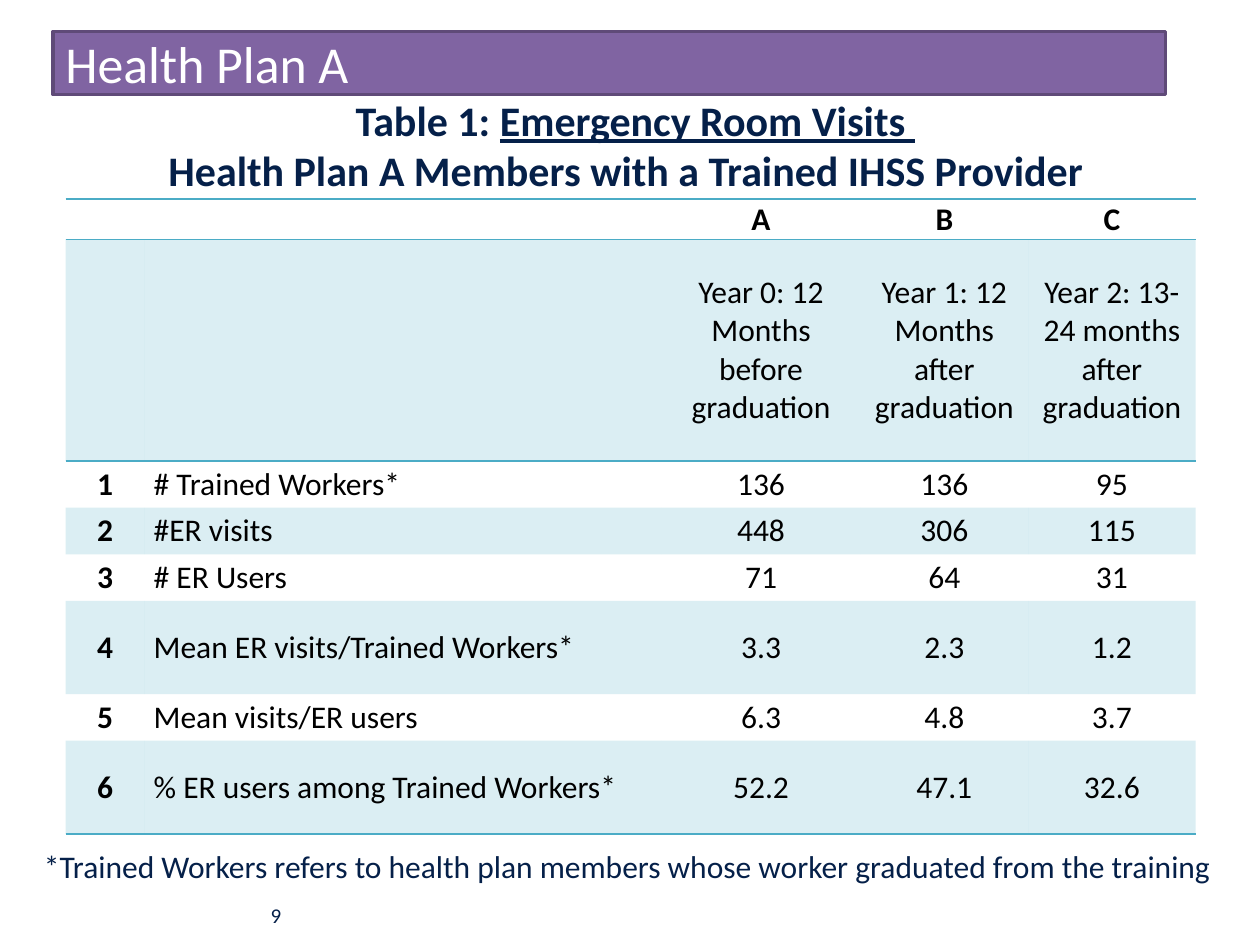
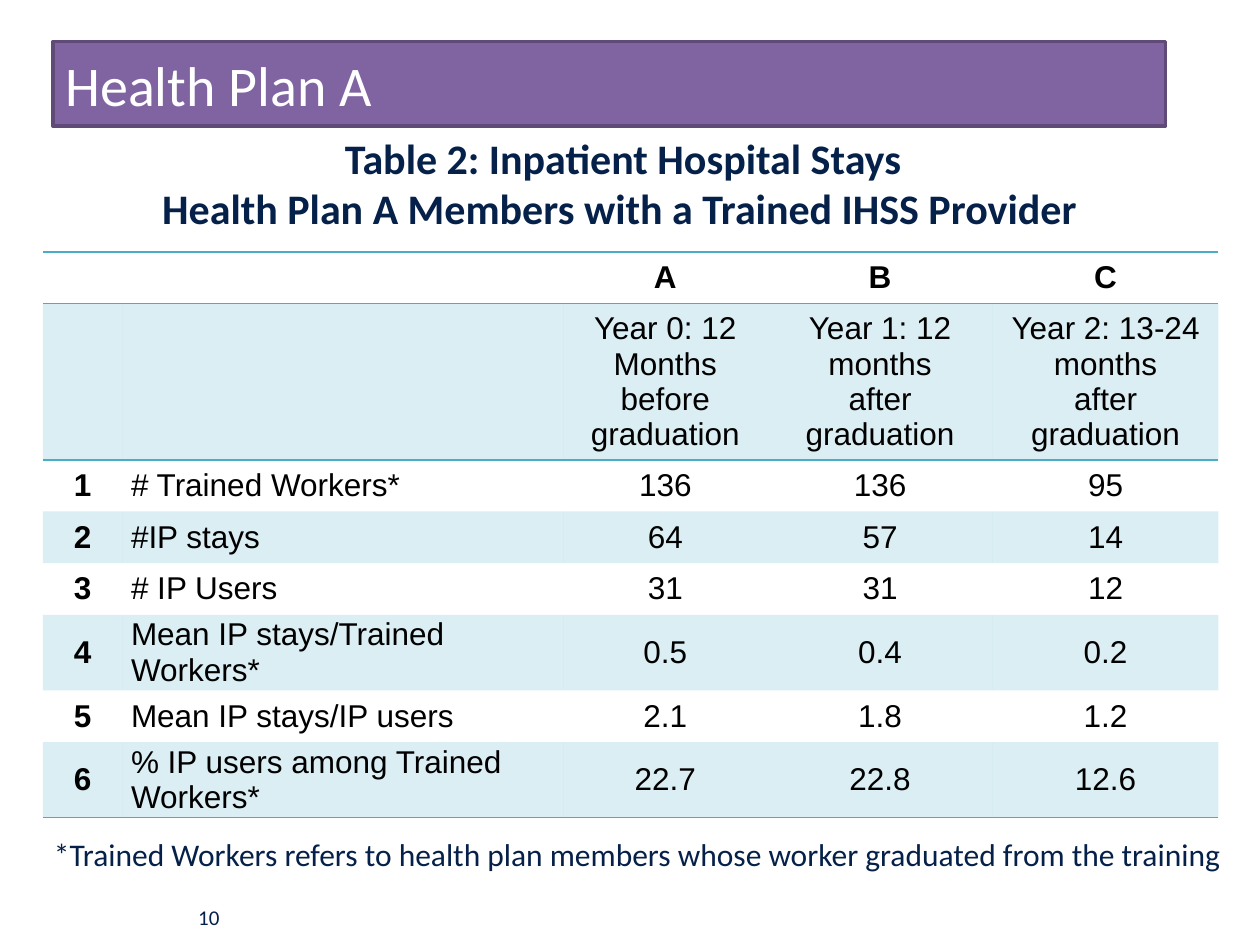
"""Build two health plan slides, each with a table of outcomes by year."""
from dataclasses import dataclass
from typing import NamedTuple

from lxml.etree import SubElement
from pptx import Presentation
from pptx.dml.color import RGBColor
from pptx.enum.shapes import MSO_SHAPE as Kind
from pptx.enum.text import MSO_ANCHOR as Anchor, PP_ALIGN as Align
from pptx.oxml.ns import qn
from pptx.util import Emu, Pt

SCALE = 9144
NAVY = RGBColor(0x05, 0x20, 0x49)
PURPLE = RGBColor(0x80, 0x64, 0xA2)
PLUM = RGBColor(0x5F, 0x4A, 0x78)
TEAL = RGBColor(0x4B, 0xAC, 0xC6)
WHITE = RGBColor(0xFF, 0xFF, 0xFF)
BLACK = RGBColor(0, 0, 0)
BODY = "Calibri"
NO_STYLE = "{2D5ABB26-0587-4C30-8999-92F81FD0307C}"
HEADING = "Health Plan A"
GROUP = "Health Plan A Members with a Trained IHSS Provider "
NOTE = ("*Trained Workers refers to health plan members "
        "whose worker graduated from the training")


class Box(NamedTuple):
    left: int
    top: int
    width: int
    height: int


class Run(NamedTuple):
    text: str
    bold: bool = False
    under: bool = False
    size: float | None = None


@dataclass
class Grid:
    box: Box
    cols: list[int]
    rows: list[int]
    font: str
    years: list[str]
    data: list[tuple[str, str, str, str]]


@dataclass
class Page:
    number: str
    num_box: Box
    band: Box
    band_size: float
    title: list[Run]
    title_box: Box
    note_box: Box
    grid: Grid


PAGES = [
    Page("9", Box(0, 706, 233, 40), Box(42, 25, 883, 50), 29.6,
         [Run(" "), Run("Table 1: ", True),
          Run("Emergency Room Visits ", True, True)],
         Box(42, 70, 917, 121), Box(25, 667, 950, 40),
         Grid(Box(52, 158, 898, 503), [63, 410, 158, 133, 133],
              [32, 176, 37, 37, 37, 74, 37, 74], BODY,
              ["Year 0: 12\nMonths before graduation",
               "Year 1: 12 Months after\ngraduation",
               "Year 2: 13-24 months after\ngraduation"],
              [("# Trained Workers*", "136", "136", "95"),
               ("#ER visits", "448", "306", "115"),
               ("# ER Users", "71", "64", "31"),
               ("Mean ER visits/Trained Workers*", "3.3", "2.3", "1.2"),
               ("Mean visits/ER users", "6.3", "4.8", "3.7"),
               ("% ER users among Trained Workers*",
                "52.2", "47.1", "32.6")])),
    Page("10", Box(17, 708, 167, 39), Box(42, 33, 883, 67), 32,
         [Run(" ", size=18),
          Run("Table 2: Inpatient Hospital Stays ", True)],
         Box(98, 100, 795, 91), Box(33, 658, 967, 40),
         Grid(Box(34, 200, 933, 450), [63, 350, 162, 179, 179],
              [41, 124] + [41] * 6, "Arial",
              ["Year 0: 12\nMonths before graduation",
               "Year 1: 12 months\nafter graduation",
               "Year 2: 13-24 months\nafter graduation"],
              [("# Trained Workers*", "136", "136", "95"),
               ("#IP stays", "64", "57", "14"),
               ("# IP Users", "31", "31", "12"),
               ("Mean IP stays/Trained Workers*", "0.5", "0.4", "0.2"),
               ("Mean IP stays/IP users", "2.1", "1.8", "1.2"),
               ("% IP users among Trained Workers*",
                "22.7", "22.8", "12.6")])),
]


def px(size: int) -> Emu:
    return Emu(size * SCALE)


def place(box: Box) -> list[Emu]:
    return [px(side) for side in box]


def write(frame, lines: list[list[Run]], *, size: float = 18,
          color: RGBColor = NAVY, font: str = BODY,
          align: Align = Align.LEFT, anchor: Anchor = Anchor.TOP) -> None:
    frame.word_wrap = True
    frame.vertical_anchor = anchor
    for i, line in enumerate(lines):
        para = frame.paragraphs[0] if i == 0 else frame.add_paragraph()
        para.alignment = align
        for part in line:
            run = para.add_run()
            run.text = part.text
            face = run.font
            face.name, face.size = font, Pt(part.size or size)
            face.bold, face.underline = part.bold, part.under
            face.color.rgb = color


def add_text(slide, box: Box, lines: list[list[Run]], **style) -> None:
    write(slide.shapes.add_textbox(*place(box)).text_frame, lines, **style)


def add_band(slide, box: Box, size: float) -> None:
    band = slide.shapes.add_shape(Kind.RECTANGLE, *place(box))
    band.shadow.inherit = False
    band.fill.solid()
    band.fill.fore_color.rgb = PURPLE
    band.line.color.rgb = PLUM
    band.line.width = Pt(2)
    write(band.text_frame, [[Run(HEADING)]], size=size, color=WHITE,
          anchor=Anchor.MIDDLE)


def add_edge(cell, side: str) -> None:
    edge = SubElement(cell._tc.get_or_add_tcPr(), qn(f"a:ln{side}"),
                      w=str(Pt(1)))
    fill = SubElement(edge, qn("a:solidFill"))
    SubElement(fill, qn("a:srgbClr"), val=str(TEAL))


def tint(cell) -> None:
    cell.fill.solid()
    cell.fill.fore_color.rgb = TEAL
    fill = cell._tc.tcPr.find(qn("a:solidFill"))
    SubElement(fill[0], qn("a:alpha"), val="20000")


def add_grid(slide, grid: Grid) -> None:
    body = [["", "", "A", "B", "C"], ["", "", *grid.years]]
    body += [[str(i), *row] for i, row in enumerate(grid.data, 1)]
    table = slide.shapes.add_table(len(body), len(grid.cols),
                                   *place(grid.box)).table
    table.first_row = table.horz_banding = False
    table._tbl.tblPr.find(qn("a:tableStyleId")).text = NO_STYLE
    for col, width in zip(table.columns, grid.cols):
        col.width = px(width)
    for row, height in zip(table.rows, grid.rows):
        row.height = px(height)
    edges = {0: "TB", 1: "T", len(body) - 1: "B"}
    for r, row in enumerate(body):
        for c, text in enumerate(row):
            cell = table.cell(r, c)
            cell.margin_left = cell.margin_right = px(7)
            cell.margin_top = cell.margin_bottom = 0
            cell.vertical_anchor = Anchor.MIDDLE
            for side in edges.get(r, ""):
                add_edge(cell, side)
            if r % 2:
                tint(cell)
            else:
                cell.fill.background()
            if text:
                bold = r == 0 or c == 0
                write(cell.text_frame,
                      [[Run(line, bold)] for line in text.split("\n")],
                      color=BLACK, font=grid.font, anchor=Anchor.MIDDLE,
                      align=Align.LEFT if c == 1 else Align.CENTER)


def add_page(deck, page: Page) -> None:
    slide = deck.slides.add_slide(deck.slide_layouts[6])
    add_text(slide, page.num_box, [[Run(page.number)]], size=12,
             align=Align.RIGHT, anchor=Anchor.MIDDLE)
    add_grid(slide, page.grid)
    add_text(slide, page.title_box, [page.title, [Run(GROUP, True)]],
             size=24, align=Align.CENTER)
    add_text(slide, page.note_box, [[Run(NOTE)]])
    add_band(slide, page.band, page.band_size)


def main() -> None:
    deck = Presentation()
    deck.slide_width, deck.slide_height = px(1000), px(750)
    for page in PAGES:
        add_page(deck, page)
    deck.save("out.pptx")


if __name__ == "__main__":
    main()
